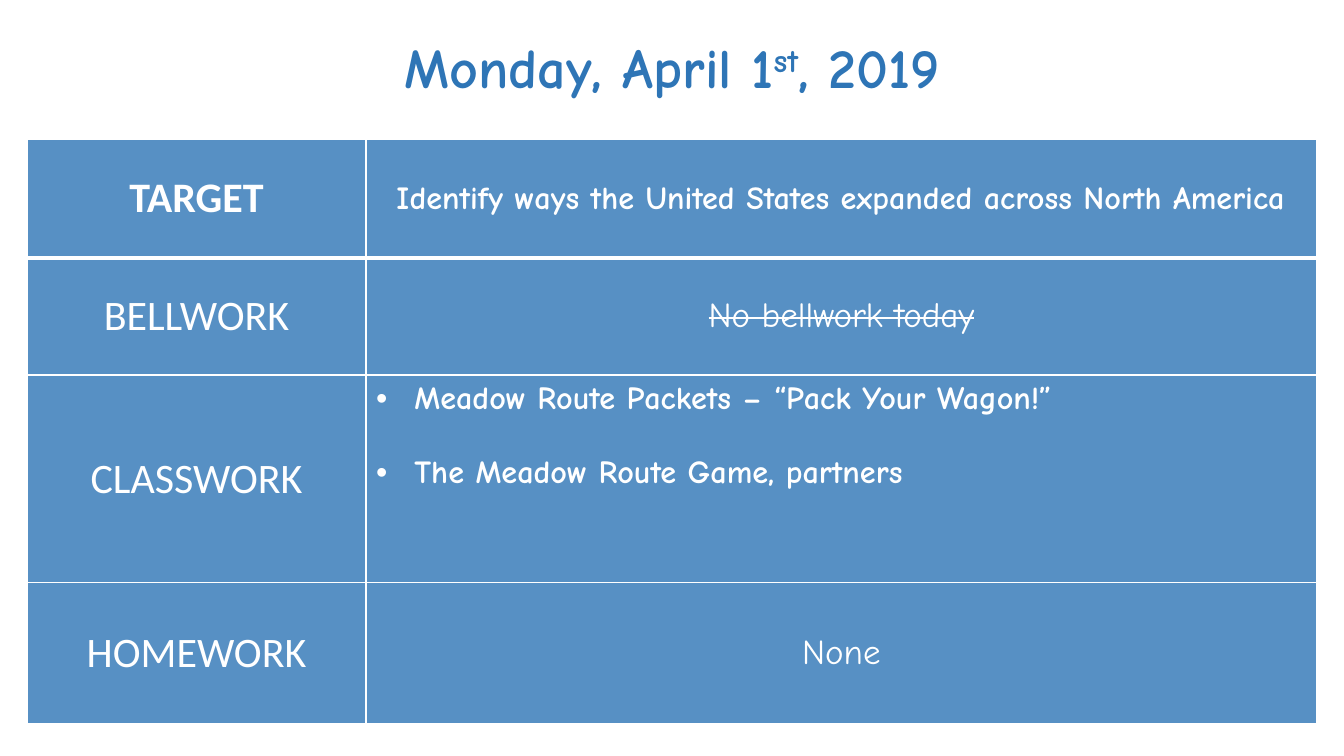
from dataclasses import dataclass

from lxml import etree
from pptx import Presentation
from pptx.dml.color import RGBColor
from pptx.enum.shapes import MSO_SHAPE
from pptx.enum.text import MSO_ANCHOR, PP_ALIGN
from pptx.oxml.ns import qn
from pptx.util import Inches, Pt

RECTANGLE = MSO_SHAPE.RECTANGLE
MIDDLE, TOP = MSO_ANCHOR.MIDDLE, MSO_ANCHOR.TOP
CENTER, LEFT = PP_ALIGN.CENTER, PP_ALIGN.LEFT

COLORS = {"blue": "2E75B6", "white": "FFFFFF"}
LABEL_FONT, BODY_FONT = "Calibri", "Comic Neue"
MARGIN, CONTENT_WIDTH = 0.27, 12.79
COLUMN_WIDTHS = (3.36, 9.43)


@dataclass
class AgendaRow:
    label: str
    lines: tuple[str, ...]
    height: float
    size: int = 25
    label_bold: bool = False
    body_bold: bool = False
    struck: bool = False
    bulleted: bool = False
    bottom_border: int = 1


AGENDA = (
    AgendaRow("TARGET", ("Identify ways the United States expanded across North America",),
              1.18, size=23, label_bold=True, body_bold=True, bottom_border=3),
    AgendaRow("BELLWORK", ("No bellwork today",), 1.16, struck=True),
    AgendaRow("CLASSWORK", ("Meadow Route Packets – “Pack Your Wagon!”",
                            "The Meadow Route Game, partners"),
              2.06, size=23, body_bold=True, bulleted=True),
    AgendaRow("HOMEWORK", ("None",), 1.4),
)


def set_fill(fill, properties, color: str, opacity: int) -> None:
    fill.solid()
    fill.fore_color.rgb = RGBColor.from_string(COLORS[color])
    # Direct children only, so that border colours stay opaque
    color_element = properties.find(qn("a:solidFill")).find(qn("a:srgbClr"))
    etree.SubElement(color_element, qn("a:alpha"), val=str(opacity * 1000))


def set_font(paragraph, name: str, size: int, color: str, bold: bool) -> None:
    font = paragraph.font
    font.name, font.size, font.bold = name, Pt(size), bold
    font.color.rgb = RGBColor.from_string(COLORS[color])


def set_borders(properties, top: int, bottom: int) -> None:
    for side, width in (("L", 1), ("R", 1), ("T", top), ("B", bottom)):
        line = etree.SubElement(properties, qn(f"a:ln{side}"), w=str(Pt(width)))
        fill = etree.SubElement(line, qn("a:solidFill"))
        etree.SubElement(fill, qn("a:srgbClr"), val=COLORS["white"])


def add_bullet(paragraph) -> None:
    properties = paragraph._p.get_or_add_pPr()
    indent = Inches(0.38)
    properties.set("marL", str(indent))
    properties.set("indent", str(-indent))
    etree.SubElement(properties, qn("a:buFont"), typeface="Arial")
    etree.SubElement(properties, qn("a:buChar"), char="•")


def fill_label(cell, row: AgendaRow) -> None:
    cell.vertical_anchor = MIDDLE
    paragraph = cell.text_frame.paragraphs[0]
    paragraph.alignment = CENTER
    paragraph.add_run().text = row.label
    set_font(paragraph, LABEL_FONT, 30, "white", row.label_bold)


def fill_body(cell, row: AgendaRow) -> None:
    cell.vertical_anchor = TOP if row.bulleted else MIDDLE
    frame = cell.text_frame
    for index, line in enumerate(row.lines):
        paragraph = frame.add_paragraph() if index else frame.paragraphs[0]
        paragraph.alignment = LEFT if row.bulleted else CENTER
        if index:
            paragraph.space_before = Pt(26.5)
        if row.bulleted:
            add_bullet(paragraph)
        run = paragraph.add_run()
        run.text = line
        if row.struck:
            run._r.get_or_add_rPr().set("strike", "sngStrike")
        set_font(paragraph, BODY_FONT, row.size, "white", row.body_bold)


# Agenda table
def add_agenda(slide) -> None:
    height = sum(row.height for row in AGENDA)
    table = slide.shapes.add_table(
        len(AGENDA), len(COLUMN_WIDTHS), Inches(MARGIN), Inches(1.38),
        Inches(CONTENT_WIDTH), Inches(height)).table
    for column, width in zip(table.columns, COLUMN_WIDTHS):
        column.width = Inches(width)
    top_border = 1
    for index, row in enumerate(AGENDA):
        table.rows[index].height = Inches(row.height)
        label_cell, body_cell = table.rows[index].cells
        for cell in (label_cell, body_cell):
            properties = cell._tc.get_or_add_tcPr()
            set_borders(properties, top_border, row.bottom_border)
            set_fill(cell.fill, properties, "blue", 80)
        fill_label(label_cell, row)
        fill_body(body_cell, row)
        top_border = row.bottom_border


# Date banner above the table
def add_date(slide) -> None:
    shape = slide.shapes.add_shape(
        RECTANGLE, Inches(MARGIN), Inches(0.16), Inches(CONTENT_WIDTH), Inches(1))
    shape.shadow.inherit = False
    set_fill(shape.fill, shape._element.spPr, "white", 65)
    shape.line.fill.background()
    shape.text_frame.word_wrap = True
    shape.text_frame.vertical_anchor = MIDDLE
    paragraph = shape.text_frame.paragraphs[0]
    paragraph.alignment = CENTER
    for text, raised in (("Monday, April 1", False), ("st", True), (", 2019", False)):
        run = paragraph.add_run()
        run.text = text
        if raised:
            run._r.get_or_add_rPr().set("baseline", "30000")
    set_font(paragraph, BODY_FONT, 40, "blue", True)


def main() -> None:
    presentation = Presentation()
    presentation.slide_width, presentation.slide_height = Inches(13.33), Inches(7.5)
    slide = presentation.slides.add_slide(presentation.slide_layouts[6])
    add_agenda(slide)
    add_date(slide)
    presentation.save("out.pptx")


if __name__ == "__main__":
    main()
